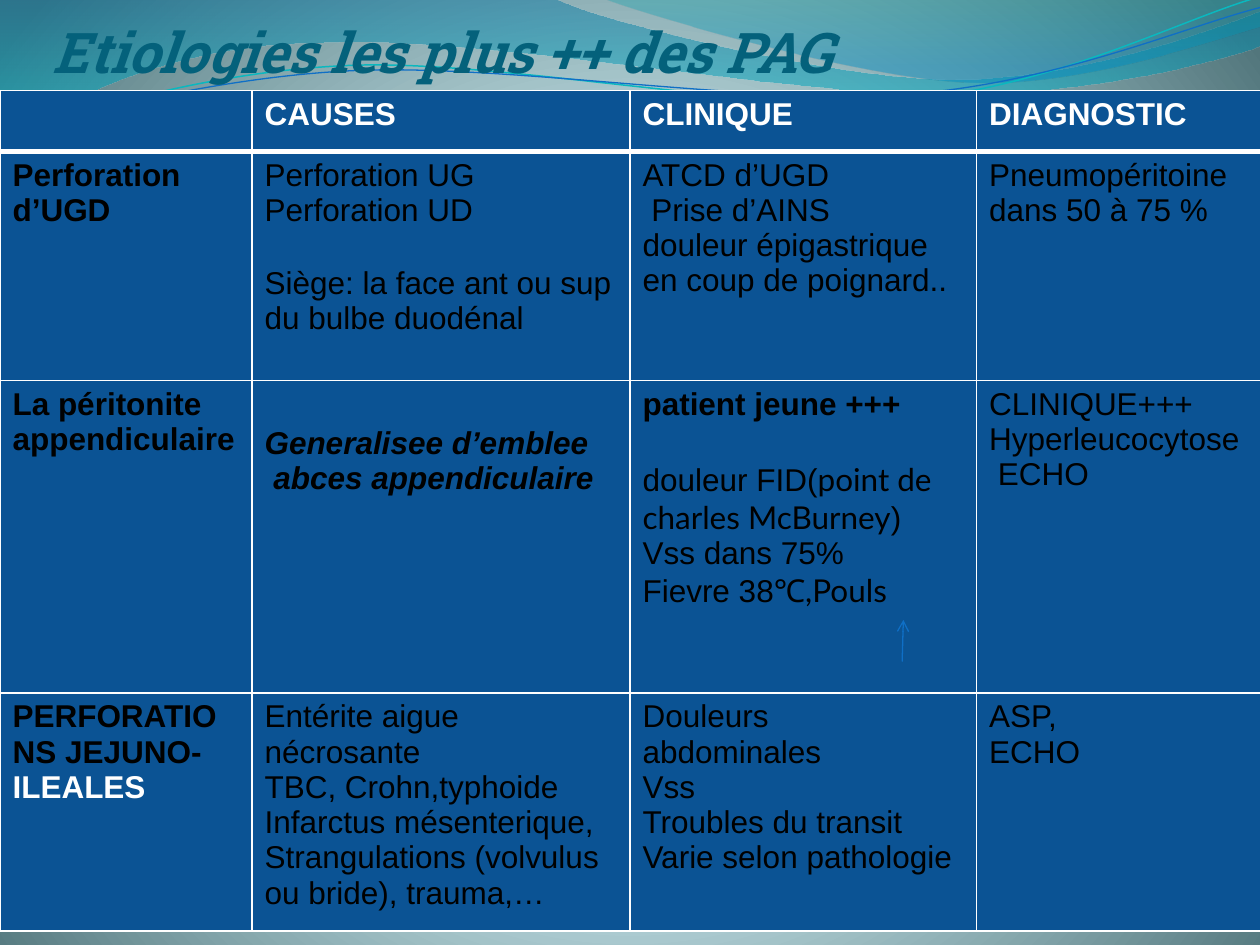
from lxml import etree
from pptx import Presentation, util as u
from pptx.dml.color import RGBColor
from pptx.enum import shapes, text
from pptx.oxml import parse_xml
from pptx.oxml.ns import nsdecls, qn

NAVY, WHITE, BLACK, BLUE, TEAL = "0B5394", "FFFFFF", "000000", "0F6FC6", "0AB8BF"
BACKDROP = [(0, "DEFBFF", 100), (25, "DDFAFF", 100), (100, "52767C", 100)]
LARGE_WAVE = [
    [(0, -0.01)], [(4.4, -0.01)],
    [(4.76, 0.17), (6.64, 0.63), (7.58, 0.63)],
    [(8.53, 0.63), (9.58, 0.26), (10, 0.09)],
    [(10.01, 0.36)],
    [(9.83, 0.44), (8.7, 0.76), (7.46, 0.75)],
    [(6.22, 0.75), (3.82, 0.28), (2.57, 0.34)],
    [(1.29, 0.35), (0.46, 0.83), (-0.01, 1.13)],
]
SMALL_WAVE = [
    [(4.79, -0.01)],
    [(5.09, 0.11), (6.82, 0.62), (7.69, 0.65)],
    [(8.56, 0.69), (9.61, 0.32), (10, 0.21)],
    [(10, 0)],
]
TEAL_CURVE = [
    [(0, 1.11)],
    [(0.48, 0.93), (1.58, 0.57), (2.77, 0.52)],
    [(3.95, 0.47), (5.93, 0.89), (7.13, 0.8)],
    [(8.33, 0.71), (9.38, 0.15), (9.98, -0.02)],
]
BLUE_CURVE = [
    [(0, 1.04)],
    [(0.47, 0.96), (1.64, 0.61), (2.83, 0.56)],
    [(4.03, 0.51), (5.97, 0.83), (7.17, 0.75)],
    [(8.36, 0.67), (9.41, 0.21), (10, 0.06)],
]

BOLD = {"bold": True}
HEADING = {"bold": True, "color": WHITE}
STRONG_ITALIC = {"bold": True, "italic": True}
LATO = {"font": "Lato"}
COLUMNS = [2, 3, 2.75, 2.33]
ROWS = [0.48, 1.82, 2.48, 1.89]
CELLS = [
    [[], [[("CAUSES", HEADING)]], [[("CLINIQUE", HEADING)]], [[("DIAGNOSTIC", HEADING)]]],
    [
        [[("Perforation  d’UGD", BOLD)]],
        ["Perforation UG", "Perforation UD", "Siège: la face ant ou sup du bulbe duodénal"],
        ["ATCD d’UGD", " Prise d’AINS", "douleur épigastrique en coup de poignard.."],
        ["Pneumopéritoine", "dans 50 à 75 %"],
    ],
    [
        [[("La péritonite appendiculaire", BOLD)]],
        [[("Generalisee d’emblee", STRONG_ITALIC)], [(" abces appendiculaire", STRONG_ITALIC)]],
        [
            [("patient jeune +++", BOLD)],
            [("douleur FID(", {}), ("point de charles McBurney", LATO), (")", {})],
            "Vss dans 75%",
            [("Fievre 38", {}), ("℃,Pouls", LATO)],
        ],
        ["CLINIQUE+++", "Hyperleucocytose", " ECHO"],
    ],
    [
        [[("PERFORATIONS JEJUNO-", BOLD), ("ILEALES", HEADING)]],
        ["Entérite aigue nécrosante", "TBC, Crohn,typhoide", "Infarctus mésenterique,",
         "Strangulations (volvulus ou bride), trauma,…"],
        ["Douleurs  abdominales", "Vss", "Troubles du transit", "Varie selon pathologie"],
        ["ASP,", "ECHO"],
    ],
]
PARAGRAPH_GAPS = {(1, 1, 2): 21.5, (2, 2, 1): 22}
TOP_MARGINS = {(2, 1): 0.36}


def rgb(color):
    """Turn a hex string into a colour."""
    return RGBColor.from_string(color)


def gradient(stops, direction):
    """Return a gradient fill element from (position, colour, opacity) stops."""
    parts = "".join(
        f'<a:gs pos="{position * 1000}"><a:srgbClr val="{color}">'
        f'<a:alpha val="{opacity * 1000}"/></a:srgbClr></a:gs>'
        for position, color, opacity in stops)
    return parse_xml(f'<a:gradFill {nsdecls("a")} rotWithShape="1">'
                     f'<a:gsLst>{parts}</a:gsLst>{direction}</a:gradFill>')


def add_run(paragraph, content, size=18, font="Arial", color=BLACK, bold=False, italic=False):
    """Append one formatted run."""
    run = paragraph.add_run()
    run.text = content
    run.font.size, run.font.name = u.Pt(size), font
    run.font.bold, run.font.italic = bold, italic
    run.font.color.rgb = rgb(color)


def set_background(slide):
    """Fill the background with a radial gradient."""
    slide.background.fill.solid()
    properties = slide.element.xpath(".//p:bgPr")[0]
    direction = ('<a:path path="circle"><a:fillToRect l="10000" t="110000" '
                 'r="10000" b="100000"/></a:path>')
    properties.replace(properties[0], gradient(BACKDROP, direction))


def add_curve(slide, outline, close):
    """Draw lines and Bezier segments as one freeform without shadow."""
    segments = [[(u.Inches(x), u.Inches(y)) for x, y in segment] for segment in outline]
    builder = slide.shapes.build_freeform(*segments[0][-1])
    builder.add_line_segments([segment[-1] for segment in segments[1:]], close=close)
    shape = builder.convert_to_shape()
    for line, segment in zip(shape.element.xpath(".//a:lnTo"), segments[1:]):
        if len(segment) == 3:
            points = "".join(f'<a:pt x="{x - shape.left}" y="{y - shape.top}"/>'
                             for x, y in segment)
            bezier = parse_xml(f'<a:cubicBezTo {nsdecls("a")}>{points}</a:cubicBezTo>')
            line.getparent().replace(line, bezier)
    shape.shadow.inherit = False
    shape.fill.background()
    return shape


def add_waves(slide):
    """Draw the two filled waves and the two thin curves."""
    for outline, stops in (
        (LARGE_WAVE, [(0, "0074A1", 45), (100, "00C6CF", 55)]),
        (SMALL_WAVE, [(0, "00A1A9", 30), (80, "008BBF", 45)]),
    ):
        wave = add_curve(slide, outline, True)
        wave.line.fill.background()
        properties = wave.element.spPr
        properties.replace(properties.find(qn("a:noFill")),
                           gradient(stops, '<a:lin ang="5400000" scaled="1"/>'))
    for outline, color, width in ((TEAL_CURVE, TEAL, 0.85), (BLUE_CURVE, BLUE, 0.75)):
        curve = add_curve(slide, outline, False)
        curve.line.color.rgb, curve.line.width = rgb(color), u.Pt(width)


def format_title(title, left, top, width, height):
    """Place and fill the title placeholder."""
    title.left, title.top, title.width, title.height = map(u.Inches, (left, top, width, height))
    frame = title.text_frame
    frame.auto_size, frame.word_wrap = text.MSO_AUTO_SIZE.NONE, True
    frame.vertical_anchor = text.MSO_ANCHOR.BOTTOM
    frame.margin_left = frame.margin_right = frame.margin_bottom = 0
    frame.margin_top = u.Inches(0.05)
    paragraph = frame.paragraphs[0]
    paragraph.alignment = text.PP_ALIGN.LEFT
    add_run(paragraph, "Etiologies les plus ++ des PAG", 32, "Roboto Slab", "04617B", True, True)


def set_borders(cell, widths):
    """Give a cell white borders from a map of side to points."""
    properties = cell._tc.get_or_add_tcPr()
    for side, width in widths.items():
        properties.append(parse_xml(
            f'<a:ln{side} {nsdecls("a")} w="{u.Pt(width)}"><a:solidFill>'
            f'<a:srgbClr val="{WHITE}"/></a:solidFill></a:ln{side}>'))


def add_causes_table(slide, left, top):
    """Build the table of causes, signs and diagnosis."""
    box = map(u.Inches, (left, top, sum(COLUMNS), sum(ROWS)))
    table = slide.shapes.add_table(len(ROWS), len(COLUMNS), *box).table
    for column, width in zip(table.columns, COLUMNS):
        column.width = u.Inches(width)
    for r, (row, height) in enumerate(zip(table.rows, ROWS)):
        row.height = u.Inches(height)
        for c, cell in enumerate(row.cells):
            set_borders(cell, {"L": 1, "R": 1, "T": 3 if r == 1 else 1, "B": 3 if r == 0 else 1})
            cell.fill.solid()
            cell.fill.fore_color.rgb = rgb(NAVY)
            cell.margin_top = u.Inches(TOP_MARGINS.get((r, c), 0.05))
            frame = cell.text_frame
            for p, runs in enumerate(CELLS[r][c]):
                paragraph = frame.add_paragraph() if p else frame.paragraphs[0]
                paragraph.space_before = u.Pt(PARAGRAPH_GAPS.get((r, c, p), 0))
                for content, style in [(runs, {})] if isinstance(runs, str) else runs:
                    add_run(paragraph, content, **style)


def add_rise_arrow(slide, x, y, rise):
    """Draw the thin upward arrow under the pulse."""
    ends = map(u.Inches, (x, y, x + 0.01, y - rise))
    arrow = slide.shapes.add_connector(shapes.MSO_CONNECTOR.STRAIGHT, *ends)
    arrow.line.color.rgb, arrow.line.width = rgb(BLUE), u.Pt(0.75)
    etree.SubElement(arrow.line._get_or_add_ln(), qn("a:tailEnd"), type="arrow")
    etree.SubElement(arrow._element.spPr, qn("a:effectLst"))


def main():
    """Build and save the slide."""
    presentation = Presentation()
    presentation.slide_width, presentation.slide_height = u.Inches(10), u.Inches(7.5)
    slide = presentation.slides.add_slide(presentation.slide_layouts[5])
    set_background(slide)
    add_waves(slide)
    title = slide.shapes.title
    format_title(title, 0.42, 0, 9, 0.67)
    slide.shapes._spTree.append(title._element)
    add_causes_table(slide, 0, 0.72)
    add_rise_arrow(slide, 7.16, 5.25, 0.33)
    presentation.save("out.pptx")


if __name__ == "__main__":
    main()
